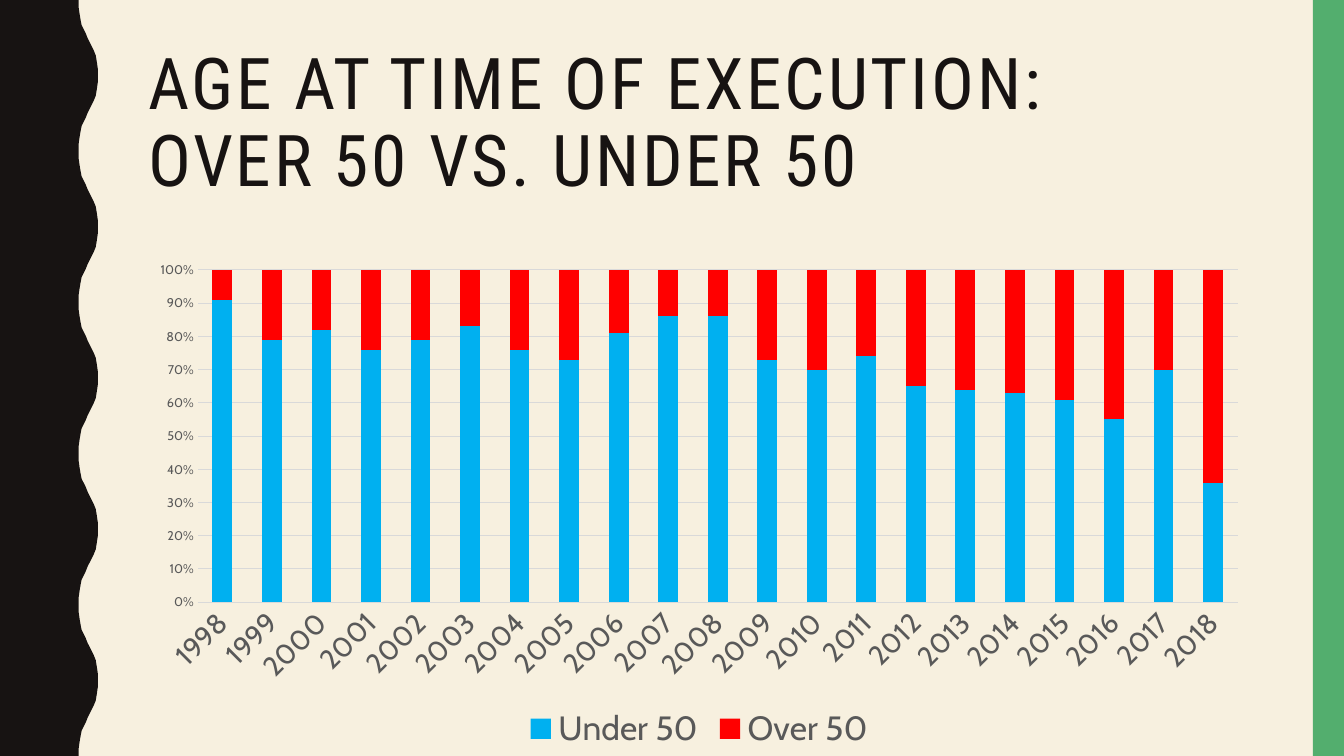
from dataclasses import dataclass

from pptx import Presentation
from pptx.chart.data import CategoryChartData
from pptx.dml.color import RGBColor
from pptx.enum.chart import XL_CHART_TYPE, XL_LEGEND_POSITION, XL_TICK_MARK
from pptx.enum.shapes import MSO_SHAPE
from pptx.enum.text import MSO_ANCHOR, MSO_AUTO_SIZE, PP_ALIGN
from pptx.util import Inches, Pt

STACKED = XL_CHART_TYPE.COLUMN_STACKED_100
BOTTOM = XL_LEGEND_POSITION.BOTTOM
NO_TICK = XL_TICK_MARK.NONE
RECTANGLE = MSO_SHAPE.RECTANGLE
MIDDLE = MSO_ANCHOR.MIDDLE
NO_AUTOFIT = MSO_AUTO_SIZE.NONE
LEFT = PP_ALIGN.LEFT

SLIDE_WIDTH, SLIDE_HEIGHT = 13.33, 7.5
TITLE_ONLY_LAYOUT = 5
WAVE_LENGTH = 1.5
WAVE_COUNT = 5
HALF_WAVE = [
    (0.78, 0), (0.78, 0.07), (0.79, 0.14), (0.8, 0.2), (0.81, 0.25),
    (0.83, 0.29), (0.85, 0.33), (0.87, 0.38), (0.89, 0.42), (0.91, 0.46),
    (0.93, 0.5), (0.95, 0.55), (0.96, 0.61), (0.97, 0.68), (0.97, 0.75),
]

TITLE_LINES = ["AGE AT TIME OF EXECUTION:", "OVER 50 VS. UNDER 50"]
YEARS = [str(year) for year in range(1998, 2019)]
UNDER_50 = [91, 79, 82, 76, 79, 83, 76, 73, 81, 86, 86,
            73, 70, 74, 65, 64, 63, 61, 55, 70, 36]
OVER_50 = [100 - share for share in UNDER_50]


@dataclass(frozen=True)
class Theme:
    background: RGBColor = RGBColor.from_string("F7F0DF")
    ink: RGBColor = RGBColor.from_string("171312")
    accent: RGBColor = RGBColor.from_string("53AE6E")
    label: RGBColor = RGBColor.from_string("595959")
    grid: RGBColor = RGBColor.from_string("D9D9D9")
    under: RGBColor = RGBColor.from_string("00B0F0")
    over: RGBColor = RGBColor.from_string("FF0000")
    heading_font: str = "Roboto Condensed"
    body_font: str = "Cabin"
    title_size: Pt = Pt(51)
    chart_size: Pt = Pt(10)
    year_size: Pt = Pt(20)
    percent_size: Pt = Pt(9)
    legend_size: Pt = Pt(24)
    grid_width: Pt = Pt(0.75)


THEME = Theme()


def style_font(font, name, size, color):
    font.name = name
    font.size = size
    font.bold = False
    font.color.rgb = color


def style_shape(shape, color):
    shape.shadow.inherit = False
    shape.fill.solid()
    shape.fill.fore_color.rgb = color
    shape.line.fill.background()


def style_line(line):
    line.color.rgb = THEME.grid
    line.width = THEME.grid_width


def add_wavy_edge(slide):
    wave = HALF_WAVE + [(x, WAVE_LENGTH - y) for x, y in HALF_WAVE[-2::-1]]
    points = [
        (Inches(x), Inches(y + index * WAVE_LENGTH))
        for index in range(WAVE_COUNT)
        for x, y in wave
    ]
    builder = slide.shapes.build_freeform(0, 0)
    builder.add_line_segments(points + [(0, Inches(SLIDE_HEIGHT))], close=True)
    style_shape(builder.convert_to_shape(), THEME.ink)


def add_side_bar(slide):
    width = 0.31
    bar = slide.shapes.add_shape(
        RECTANGLE, Inches(SLIDE_WIDTH - width), 0, Inches(width), Inches(SLIDE_HEIGHT)
    )
    style_shape(bar, THEME.accent)


def set_title(slide):
    title = slide.shapes.title
    title.left, title.top = Inches(1.37), Inches(0.42)
    title.width, title.height = Inches(11.13), Inches(1.63)
    frame = title.text_frame
    frame.word_wrap = True
    frame.auto_size = NO_AUTOFIT
    frame.vertical_anchor = MIDDLE
    paragraph = frame.paragraphs[0]
    paragraph.alignment = LEFT
    paragraph.line_spacing = 0.9
    for index, line in enumerate(TITLE_LINES):
        if index:
            paragraph.add_line_break()
        run = paragraph.add_run()
        run.text = line
        style_font(run.font, THEME.heading_font, THEME.title_size, THEME.ink)
        run._r.get_or_add_rPr().set("spc", "200")


def style_axes(chart):
    years, percents = chart.category_axis, chart.value_axis
    for axis, size in ((years, THEME.year_size), (percents, THEME.percent_size)):
        axis.major_tick_mark = NO_TICK
        axis.minor_tick_mark = NO_TICK
        style_font(axis.tick_labels.font, THEME.body_font, size, THEME.label)
    style_line(years.format.line)
    years._element.txPr.bodyPr.set("rot", "-2700000")
    percents.format.line.fill.background()
    percents.has_major_gridlines = True
    style_line(percents.major_gridlines.format.line)
    percents.tick_labels.number_format = "0%"
    percents.tick_labels.number_format_is_linked = False


def add_age_chart(slide):
    data = CategoryChartData()
    data.categories = YEARS
    data.add_series("Under 50", UNDER_50)
    data.add_series("Over 50", OVER_50)
    chart = slide.shapes.add_chart(
        STACKED, Inches(1.37), Inches(2.5), Inches(11.13), Inches(5), data
    ).chart
    chart.has_title = False
    chart.font.name = THEME.body_font
    chart.font.size = THEME.chart_size
    style_axes(chart)
    plot = chart.plots[0]
    plot.gap_width = 150
    plot.overlap = 100
    plot.vary_by_categories = False
    for series, color in zip(plot.series, (THEME.under, THEME.over)):
        series.format.fill.solid()
        series.format.fill.fore_color.rgb = color
    chart.has_legend = True
    chart.legend.position = BOTTOM
    chart.legend.include_in_layout = False
    style_font(chart.legend.font, THEME.body_font, THEME.legend_size, THEME.label)


def main():
    presentation = Presentation()
    presentation.slide_width = Inches(SLIDE_WIDTH)
    presentation.slide_height = Inches(SLIDE_HEIGHT)
    slide = presentation.slides.add_slide(presentation.slide_layouts[TITLE_ONLY_LAYOUT])
    slide.background.fill.solid()
    slide.background.fill.fore_color.rgb = THEME.background
    add_wavy_edge(slide)
    add_side_bar(slide)
    set_title(slide)
    add_age_chart(slide)
    presentation.save("out.pptx")


if __name__ == "__main__":
    main()
